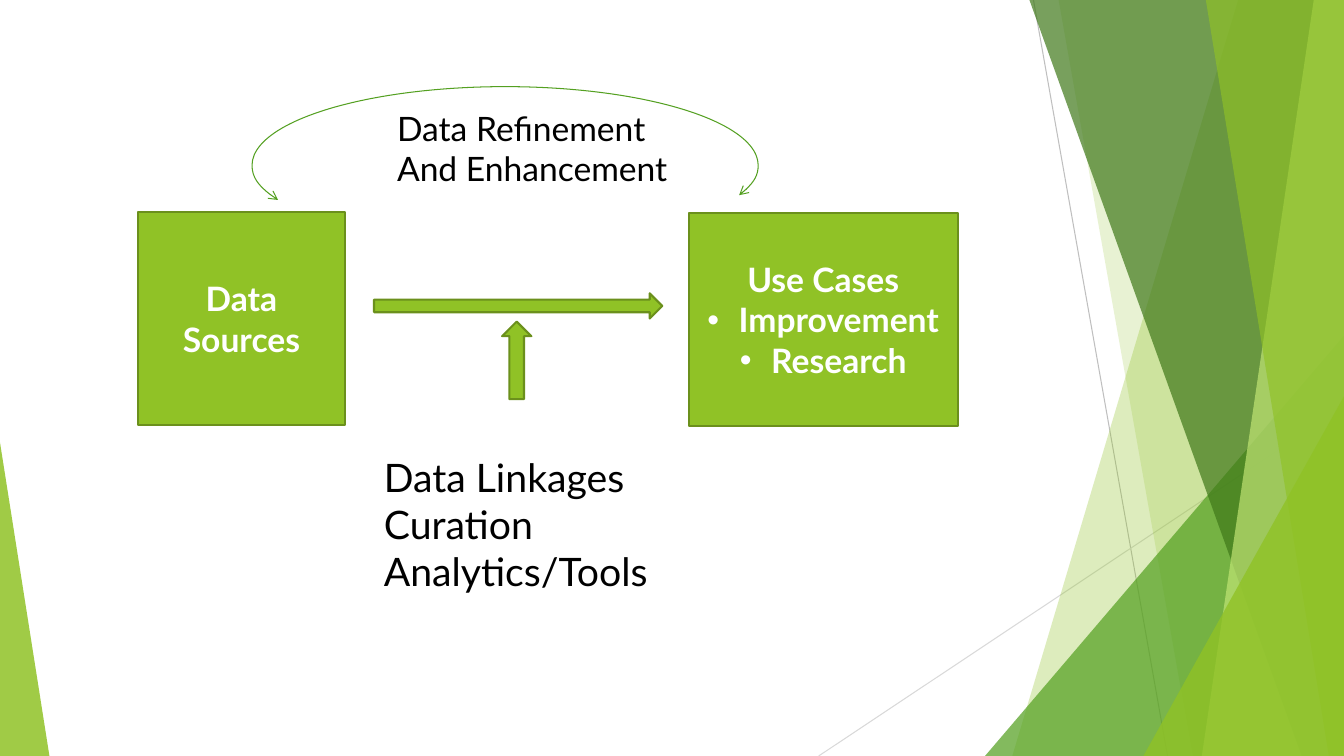
"""Build the data-flow slide with its layered green panels."""
from dataclasses import dataclass

from lxml import etree
from pptx import Presentation
from pptx.dml.color import RGBColor
from pptx.enum.dml import MSO_FILL
from pptx.enum.shapes import MSO_CONNECTOR, MSO_SHAPE
from pptx.enum.text import MSO_ANCHOR, MSO_AUTO_SIZE, PP_ALIGN
from pptx.oxml.ns import qn
from pptx.util import Emu, Inches, Pt

RECTANGLE, TRIANGLE = MSO_SHAPE.RECTANGLE, MSO_SHAPE.ISOSCELES_TRIANGLE
RIGHT_ARROW, ARC = MSO_SHAPE.RIGHT_ARROW, MSO_SHAPE.ARC
STRAIGHT, SOLID = MSO_CONNECTOR.STRAIGHT, MSO_FILL.SOLID
CENTER, MIDDLE = PP_ALIGN.CENTER, MSO_ANCHOR.MIDDLE
FIT_SHAPE = MSO_AUTO_SIZE.SHAPE_TO_FIT_TEXT

COLUMNS, ROWS = 13.33, 7.5
CELL = Inches(1)
FONT = "Lato"
LIME, OLIVE, GREEN = "90C226", "6B901C", "54A021"
FOREST, PALE, WHITE, BLACK = "3F7819", "C0E474", "FFFFFF", "000000"


@dataclass(frozen=True)
class Area:
    """A place on the grid, in columns and rows."""
    column: float
    row: float
    width: float
    height: float


@dataclass(frozen=True)
class Ray:
    """A thin straight line behind the panels."""
    start: tuple[float, float]
    end: tuple[float, float]
    color: str


@dataclass(frozen=True)
class Panel:
    """A full-height panel that reaches the right edge of the slide."""
    top_column: float
    bottom_column: float
    color: str
    opacity: int


@dataclass(frozen=True)
class Wedge:
    """A corner triangle that stands on the bottom edge of the slide."""
    column: float
    width: float
    height: float
    apex: float
    color: str
    opacity: int


@dataclass(frozen=True)
class Stage:
    """A box of the flow with a heading and bulleted items."""
    area: Area
    heading: str
    items: tuple[str, ...] = ()


@dataclass(frozen=True)
class FlowArrow:
    """A block arrow of the flow."""
    area: Area
    rotation: int = 0


@dataclass(frozen=True)
class Caption:
    """Lines of free text beside the flow."""
    area: Area
    size: int
    lines: tuple[str, ...]


RAYS = (
    Ray((10.25, 0), (11.58, ROWS), "BFBFBF"),
    Ray((COLUMNS, 4.03), (8.12, ROWS), "D9D9D9"),
)
BACKDROP = (
    Panel(12.28, 10.04, LIME, 30),
    Panel(10.5, 11.83, LIME, 20),
    Wedge(9.77, 3.56, 4.17, 1, GREEN, 72),
    Panel(10.21, 12.91, FOREST, 70),
    Panel(13.03, 11.92, PALE, 70),
    Panel(11.96, 13.18, LIME, 65),
    Wedge(11.34, 1.99, 3.57, 1, LIME, 80),
    Wedge(0, 0.49, 3.11, 0, LIME, 85),
)
STAGES = (
    Stage(Area(1.37, 2.1, 2.05, 2.12), "Data Sources"),
    Stage(Area(6.83, 2.11, 2.67, 2.12), "Use Cases", ("Improvement", "Research")),
)
FLOW_ARROWS = (
    FlowArrow(Area(3.71, 2.91, 2.86, 0.25)),
    FlowArrow(Area(4.74, 3.43, 0.77, 0.29), 270),
)
LINKAGES = Caption(Area(3.71, 4.45, 2.87, 1.82), 28,
                   ("Data Linkages", "Curation", "Analytics/Tools"))
REFINEMENT = Caption(Area(3.84, 1.02, 2.91, 0.91), 24,
                     ("Data Refinement", "And Enhancement"))
FEEDBACK_AREA = Area(2.5, 0.86, 5.02, 1.56)
FEEDBACK_START, FEEDBACK_END = 171.3, 7.3


def grid(cells: float) -> Emu:
    """Turn grid cells into a length."""
    return Emu(round(cells * CELL))


def place(area: Area) -> tuple[Emu, ...]:
    """Give the left, top, width and height of an area."""
    return tuple(grid(n) for n in (area.column, area.row, area.width, area.height))


def paint(color_format, color: str) -> None:
    """Set a colour from its hex string."""
    color_format.rgb = RGBColor.from_string(color)


def style(shape, fill: str | None, line: str | None, width: float = 1.5,
          opacity: int = 100) -> None:
    """Set fill, outline and opacity, and drop the shadow."""
    shape.shadow.inherit = False
    if fill:
        shape.fill.solid()
        paint(shape.fill.fore_color, fill)
    else:
        shape.fill.background()
    if line:
        paint(shape.line.color, line)
        shape.line.width = Pt(width)
    else:
        shape.line.fill.background()
    if shape.fill.type == SOLID and opacity < 100:
        tint = shape._element.spPr.find(qn("a:solidFill")).find(qn("a:srgbClr"))
        etree.SubElement(tint, qn("a:alpha"), val=str(opacity * 1000))


def write(paragraph, text: str, size: int, color: str, bold: bool = False) -> None:
    """Add one formatted run to a paragraph."""
    run = paragraph.add_run()
    run.text = text
    run.font.name, run.font.size, run.font.bold = FONT, Pt(size), bold
    paint(run.font.color, color)


def paragraphs(frame, count: int) -> list:
    """Give the first paragraph of a frame and as many more as needed."""
    return [frame.paragraphs[0]] + [frame.add_paragraph() for _ in range(count - 1)]


def add_bullet(paragraph) -> None:
    """Give a paragraph a hanging round bullet."""
    properties = paragraph._p.get_or_add_pPr()
    indent = Inches(0.31)
    properties.set("marL", str(indent))
    properties.set("indent", str(-indent))
    etree.SubElement(properties, qn("a:buFont"), typeface="Arial")
    etree.SubElement(properties, qn("a:buChar"), char="•")


def draw_ray(shapes, ray: Ray) -> None:
    """Draw a thin straight line."""
    ends = [grid(n) for n in (*ray.start, *ray.end)]
    connector = shapes.add_connector(STRAIGHT, *ends)
    paint(connector.line.color, ray.color)
    connector.line.width = Pt(0.75)
    etree.SubElement(connector._element.spPr, qn("a:effectLst"))


def draw_backdrop(shapes, part: Panel | Wedge) -> None:
    """Draw one translucent part of the backdrop."""
    if isinstance(part, Panel):
        corners = [(grid(column), grid(row)) for column, row in (
            (part.top_column, 0), (COLUMNS, 0), (COLUMNS, ROWS), (part.bottom_column, ROWS))]
        builder = shapes.build_freeform(*corners[0])
        builder.add_line_segments(corners[1:], close=True)
        shape = builder.convert_to_shape()
    else:
        area = Area(part.column, ROWS - part.height, part.width, part.height)
        shape = shapes.add_shape(TRIANGLE, *place(area))
        shape.adjustments[0] = part.apex
    style(shape, part.color, None, opacity=part.opacity)


def draw_stage(shapes, stage: Stage) -> None:
    """Draw a box with its heading and bulleted items."""
    box = shapes.add_shape(RECTANGLE, *place(stage.area))
    style(box, LIME, OLIVE)
    frame = box.text_frame
    frame.word_wrap, frame.vertical_anchor = True, MIDDLE
    texts = (stage.heading, *stage.items)
    for index, paragraph in enumerate(paragraphs(frame, len(texts))):
        paragraph.alignment = CENTER
        if index:
            add_bullet(paragraph)
        write(paragraph, texts[index], 24, WHITE, bold=True)


def draw_flow_arrow(shapes, arrow: FlowArrow) -> None:
    """Draw a block arrow."""
    shape = shapes.add_shape(RIGHT_ARROW, *place(arrow.area))
    shape.rotation = arrow.rotation
    style(shape, LIME, OLIVE)


def draw_caption(shapes, caption: Caption) -> None:
    """Draw unwrapped lines of text."""
    frame = shapes.add_textbox(*place(caption.area)).text_frame
    frame.word_wrap, frame.auto_size = False, FIT_SHAPE
    for paragraph, text in zip(paragraphs(frame, len(caption.lines)), caption.lines):
        write(paragraph, text, caption.size, BLACK)


def draw_feedback(shapes) -> None:
    """Draw the two-headed arc between the stages."""
    arc = shapes.add_shape(ARC, *place(FEEDBACK_AREA))
    for index, degrees in enumerate((FEEDBACK_START, FEEDBACK_END)):
        arc.adjustments[index] = degrees * 0.6
    style(arc, None, GREEN, 0.75)
    outline = arc.line._get_or_add_ln()
    for end in ("a:headEnd", "a:tailEnd"):
        etree.SubElement(outline, qn(end), type="arrow")


def main() -> None:
    """Build and save the slide."""
    deck = Presentation()
    deck.slide_width, deck.slide_height = grid(COLUMNS), grid(ROWS)
    shapes = deck.slides.add_slide(deck.slide_layouts[6]).shapes
    for ray in RAYS:
        draw_ray(shapes, ray)
    for part in BACKDROP:
        draw_backdrop(shapes, part)
    for stage in STAGES:
        draw_stage(shapes, stage)
    for arrow in FLOW_ARROWS:
        draw_flow_arrow(shapes, arrow)
    draw_caption(shapes, LINKAGES)
    draw_feedback(shapes)
    draw_caption(shapes, REFINEMENT)
    deck.save("out.pptx")


if __name__ == "__main__":
    main()
